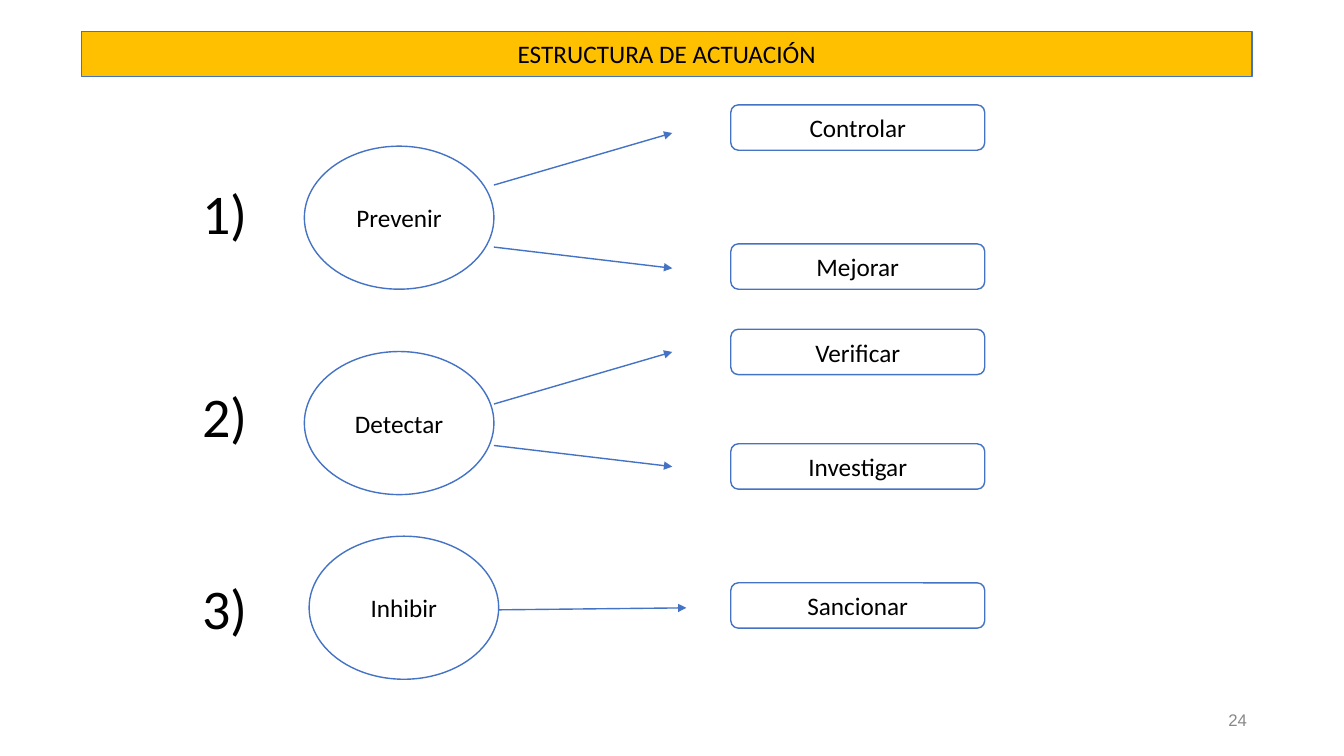
from lxml.etree import SubElement
from pptx import Presentation
from pptx.dml.color import RGBColor
from pptx.enum.shapes import MSO_CONNECTOR, MSO_SHAPE
from pptx.enum.text import MSO_ANCHOR, MSO_AUTO_SIZE, PP_ALIGN
from pptx.oxml.ns import qn
from pptx.util import Pt

TITLE = "ESTRUCTURA DE ACTUACIÓN"
PAGE_NUMBER = "24"

# Arrows run from (x, y) to (x, y); each result has the top of its box. In points.
STAGES = [
    {"number": "1)", "number_top": 123.8, "action": "Prevenir", "at": (217.4, 104.4),
     "results": [("Controlar", 74.9, (352.8, 132.2, 480.2, 95)),
                 ("Mejorar", 174.2, (352.8, 176.5, 480.2, 191.6))]},
    {"number": "2)", "number_top": 269.3, "action": "Detectar", "at": (217.4, 251.1),
     "results": [("Verificar", 235.2, (352.8, 288.6, 480.2, 251.4)),
                 ("Investigar", 317, (352.8, 318.2, 480.2, 333.3))]},
    {"number": "3)", "number_top": 406.1, "action": "Inhibir", "at": (220.8, 383),
     "results": [("Sancionar", 416.3, (355.9, 435.6, 490.3, 434.2))]},
]

NUMBER_LEFT, NUMBER_WIDTH, NUMBER_HEIGHT = 136.8, 47.5, 55.4
ACTION_WIDTH, ACTION_HEIGHT = 135.4, 102.2
RESULT_LEFT, RESULT_WIDTH, BAR_HEIGHT = 522, 181.4, 32.4
BLUE, AMBER, WHITE, BLACK, GREY = "4472C4", "FFC000", "FFFFFF", "000000", "888888"


def color(hex_code):
    return RGBColor.from_string(hex_code)


def write(holder, text, size=18, font="Calibri", ink=BLACK, align=PP_ALIGN.CENTER,
          anchor=MSO_ANCHOR.MIDDLE, inset=3.6, wrap=True):
    frame = holder.text_frame
    frame.auto_size = MSO_AUTO_SIZE.NONE
    frame.word_wrap = wrap
    frame.vertical_anchor = anchor
    frame.margin_left = frame.margin_right = Pt(inset)
    frame.margin_top = frame.margin_bottom = Pt(3.6)
    paragraph = frame.paragraphs[0]
    paragraph.alignment = align
    paragraph.line_spacing = 1.0
    run = paragraph.add_run()
    run.text = text
    run.font.size = Pt(size)
    run.font.name = font
    run.font.color.rgb = color(ink)


def paint(holder, fill):
    holder.fill.solid()
    holder.fill.fore_color.rgb = color(fill)
    holder.line.color.rgb = color(BLUE)
    holder.line.width = Pt(1)
    holder.shadow.inherit = False


def add_title(slide, text):
    title = slide.shapes.title
    title.left, title.top, title.width, title.height = map(Pt, (58.3, 22.3, 835.9, BAR_HEIGHT))
    outline = SubElement(title.element.spPr, qn("a:prstGeom"), prst="roundRect")
    SubElement(outline, qn("a:avLst"))
    paint(title, AMBER)
    write(title, text)


def add_label(slide, text, left, top, width, height, **text_format):
    label = slide.shapes.add_textbox(Pt(left), Pt(top), Pt(width), Pt(height))
    write(label, text, wrap=False, **text_format)


def add_node(slide, kind, text, left, top, width, height):
    node = slide.shapes.add_shape(kind, Pt(left), Pt(top), Pt(width), Pt(height))
    paint(node, WHITE)
    write(node, text)


def add_arrow(slide, ends):
    arrow = slide.shapes.add_connector(MSO_CONNECTOR.STRAIGHT, *map(Pt, ends))
    arrow.line.color.rgb = color(BLUE)
    arrow.line.width = Pt(1)
    SubElement(arrow.line._get_or_add_ln(), qn("a:tailEnd"), type="triangle")
    SubElement(arrow._element.spPr, qn("a:effectLst"))


def main():
    deck = Presentation()
    deck.slide_width, deck.slide_height = Pt(960), Pt(540)
    slide = deck.slides.add_slide(deck.slide_layouts[5])
    add_title(slide, TITLE)
    for stage in STAGES:
        add_label(slide, stage["number"], NUMBER_LEFT, stage["number_top"], NUMBER_WIDTH,
                  NUMBER_HEIGHT, size=40, anchor=MSO_ANCHOR.TOP, inset=7.2)
        add_node(slide, MSO_SHAPE.OVAL, stage["action"], *stage["at"],
                 ACTION_WIDTH, ACTION_HEIGHT)
        for result, top, ends in stage["results"]:
            add_arrow(slide, ends)
            add_node(slide, MSO_SHAPE.ROUNDED_RECTANGLE, result, RESULT_LEFT, top,
                     RESULT_WIDTH, BAR_HEIGHT)
    add_label(slide, PAGE_NUMBER, 873.4, 504, 20.9, 20.9, size=12, font="Arial",
              ink=GREY, align=PP_ALIGN.RIGHT)
    deck.save("out.pptx")


if __name__ == "__main__":
    main()
